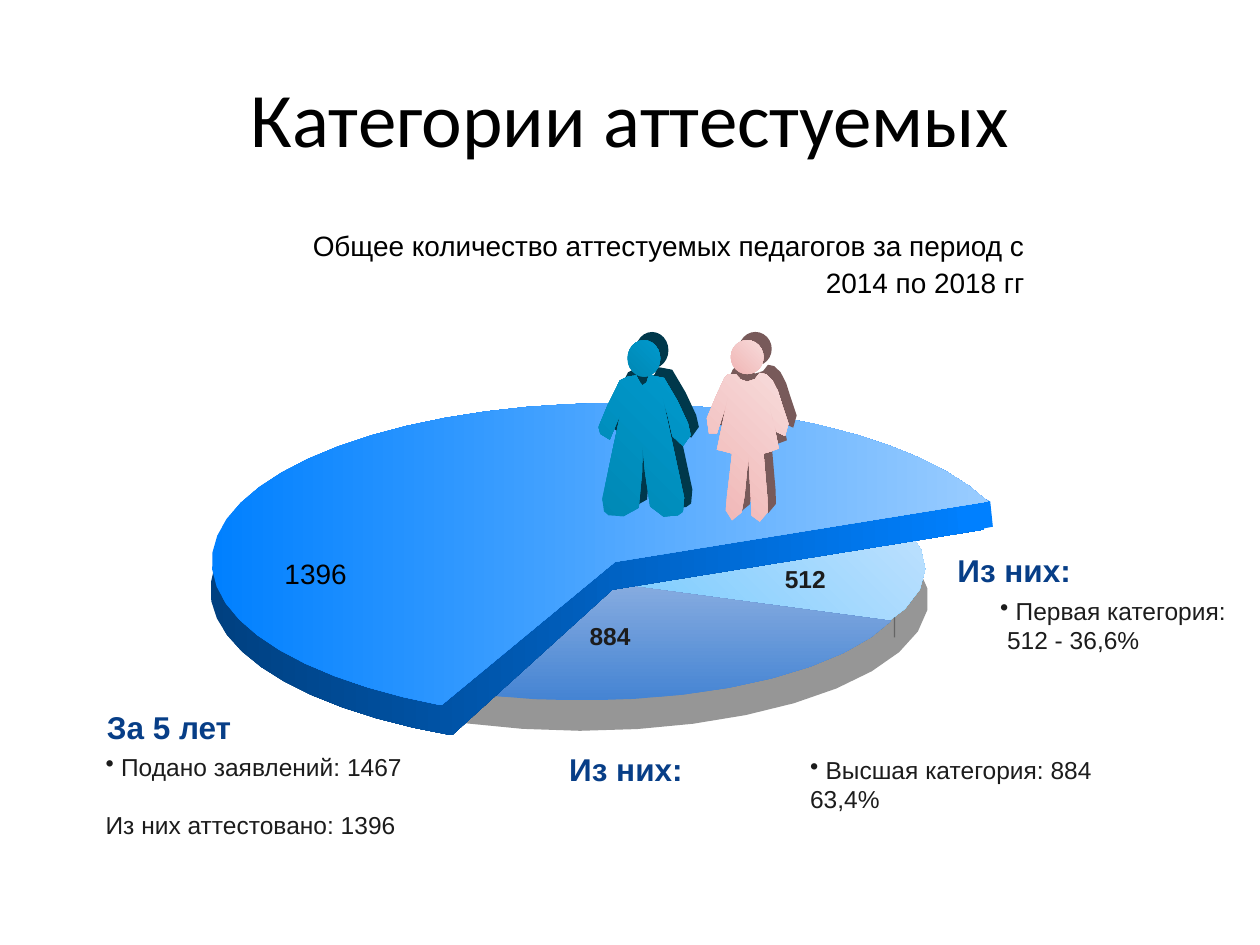
from math import cos, radians, sin

from lxml import etree
from pptx import Presentation
from pptx.dml.color import RGBColor
from pptx.enum.shapes import MSO_CONNECTOR, MSO_SHAPE
from pptx.enum.text import MSO_ANCHOR, PP_ALIGN
from pptx.oxml.ns import qn
from pptx.util import Pt

LEFT, CENTER, RIGHT = PP_ALIGN.LEFT, PP_ALIGN.CENTER, PP_ALIGN.RIGHT
TOP, MIDDLE = MSO_ANCHOR.TOP, MSO_ANCHOR.MIDDLE
OVAL, STRAIGHT = MSO_SHAPE.OVAL, MSO_CONNECTOR.STRAIGHT

BLACK = RGBColor(0x00, 0x00, 0x00)
INK = RGBColor(0x1C, 0x1C, 0x1C)
NAVY = RGBColor(0x07, 0x3E, 0x87)
GREY = RGBColor(0x96, 0x96, 0x96)
SKY = RGBColor(0x31, 0xB6, 0xFD)
SKY_PALE = RGBColor(0xCA, 0xE4, 0xFE)
STEEL = RGBColor(0x45, 0x84, 0xD3)
STEEL_PALE = RGBColor(0xCF, 0xD8, 0xEE)
BLUE = RGBColor(0x00, 0x80, 0xFF)
BLUE_DARK = RGBColor(0x00, 0x40, 0x80)
BLUE_PALE = RGBColor(0x99, 0xCC, 0xFF)
TEAL = RGBColor(0x00, 0x88, 0xB5)
TEAL_LIGHT = RGBColor(0x00, 0x99, 0xCC)
TEAL_DARK = RGBColor(0x00, 0x38, 0x4B)
PINK = RGBColor(0xF0, 0xB5, 0xB4)
PINK_LIGHT = RGBColor(0xF7, 0xDB, 0xDB)
PINK_DARK = RGBColor(0x78, 0x5A, 0x5A)

prs = Presentation()
prs.slide_width, prs.slide_height = Pt(720), Pt(540)
slide = prs.slides.add_slide(prs.slide_layouts[6])
shapes = slide.shapes


def paint(s, colours, angle=0):
    """Fill with one colour, or with a gradient of two."""
    s.shadow.inherit = False
    s.line.fill.background()
    if len(colours) == 1:
        s.fill.solid()
        s.fill.fore_color.rgb = colours[0]
    else:
        s.fill.gradient()
        s.fill.gradient_angle = angle
        for stop, colour in zip(s.fill.gradient_stops, colours):
            stop.color.rgb = colour


def outline(points):
    """Closed freeform through points given in points."""
    grid = [(x * 100, y * 100) for x, y in points]
    builder = shapes.build_freeform(*grid[0], scale=Pt(1) / 100)
    builder.add_line_segments(grid[1:], close=True)
    return builder.convert_to_shape()


# Pie sectors: centre, radii, start and end angle (clockwise), fill
SECTORS = [
    (332.2, 342.4, 198.4, 75.2, -33.3, 308.8, [GREY], 0),
    (337.9, 324.7, 190.8, 67.5, -19, 333, [SKY, SKY_PALE], 45),
    (332.6, 331.2, 187.9, 69.1, 20, 333, [STEEL, STEEL_PALE], 90),
    (349.9, 337, 229.7, 90.7, 113.5, 337.7, [BLUE_DARK, BLUE], 0),
    (351.4, 321.1, 230.4, 90.7, 115.5, 337.6, [BLUE, BLUE_PALE], 0),
]
STEPS = 36
for i, (cx, cy, rx, ry, start, end, colours, angle) in enumerate(SECTORS):
    if i == 3:
        # Boundary tick between the two lower sectors
        s = shapes.add_connector(STRAIGHT, Pt(511.2), Pt(352.8), Pt(511.2), Pt(364.3))
        s.line.width = Pt(0.75)
        s.line.color.rgb = INK
        clr = s.line._ln.find(".//" + qn("a:srgbClr"))
        etree.SubElement(clr, qn("a:alpha"), val="40000")
        etree.SubElement(s._element.spPr, qn("a:effectLst"))
    if i == 4:
        # Right edge of the raised sector
        edge = [(565.9, 286.6), (567.4, 301), (547.9, 304.6), (545, 275.8)]
        paint(outline(edge), [BLUE])
    turns = [radians(start + (end - start) * n / STEPS) for n in range(STEPS + 1)]
    arc = [(cx + rx * cos(t), cy + ry * sin(t)) for t in turns]
    paint(outline(arc + [(cx, cy)]), colours, angle)

# Bodies on a grid of 0.72 pt: start, then curves (6 numbers) or lines (2)
MAN = [
    (515, 298), (515, 302, 512, 306, 510, 306), (509, 306, 507, 302, 505, 298),
    (500, 298, 496, 299, 492, 302), (489, 306, 475, 337, 475, 339),
    (475, 341, 476, 348, 484, 349), (490, 345, 496, 312, 496, 312),
    (494, 320, 478, 396, 478, 396), (477, 406, 481, 408, 483, 409),
    (488, 410, 502, 412, 507, 403), (511, 393, 509, 353, 510, 353),
    (512, 353, 511, 393, 516, 402), (520, 412, 533, 411, 538, 409),
    (540, 408, 545, 407, 543, 395), (525, 312),
    (523, 301, 527, 323, 530, 330), (533, 337, 533, 358, 542, 354),
    (552, 350, 547, 341, 546, 336), (544, 334, 532, 302, 527, 300),
    (519, 298, 515, 298, 515, 298),
]
WOMAN = [
    (593, 303), (598, 303, 601, 300, 603, 296), (606, 296, 610, 297, 613, 302),
    (616, 306, 619, 314, 621, 322), (623, 329, 631, 345, 623, 346),
    (617, 348, 615, 340, 613, 333), (611, 323, 607, 310, 607, 310),
    (608, 314, 619, 348, 618, 356), (611, 359, 612, 358, 606, 360),
    (607, 371, 608, 385, 609, 395), (609, 401, 612, 413, 603, 414),
    (594, 414, 597, 407, 596, 397), (594, 362), (591, 393),
    (589, 403, 590, 413, 581, 413), (573, 413, 577, 398, 577, 394),
    (577, 389, 581, 366, 581, 360), (575, 358, 569, 357, 569, 357),
    (579, 310), (579, 308, 572, 341, 569, 344),
    (566, 348, 558, 344, 561, 332), (562, 328, 574, 302, 575, 300),
    (577, 298, 578, 295, 584, 297), (587, 300, 588, 303, 593, 303),
]
FIGURES = [
    (MAN, (358.6, 194.4, 18.7, 20.9), [TEAL, TEAL_LIGHT], [TEAL_DARK]),
    (WOMAN, (417.6, 194.4, 18.7, 19.4), [PINK, PINK_LIGHT], [PINK_DARK]),
]
DEPTH = 4.7
for body, (x, y, w, h), front, back in FIGURES:
    points = [body[0]]
    for seg in body[1:]:
        if len(seg) == 2:
            points.append(seg)
            continue
        # Middle and end of each curve
        x0, y0 = points[-1]
        x1, y1, x2, y2, x3, y3 = seg
        middle = ((x0 + 3 * x1 + 3 * x2 + x3) / 8, (y0 + 3 * y1 + 3 * y2 + y3) / 8)
        points += [middle, (x3, y3)]
    # Dark back layer, offset up and right, then the front
    for shift, colours in ((DEPTH, back), (0, front)):
        paint(outline([(px * 0.72 + shift, py * 0.72 - shift) for px, py in points]), colours, 45)
        s = shapes.add_shape(OVAL, Pt(x + shift), Pt(y - shift), Pt(w), Pt(h))
        paint(s, colours, 45)

# Text formats
NUMBER = dict(size=Pt(14), name="Arial", bold=True)
HEAD = dict(size=Pt(18), name="Arial", bold=True)
BODY = dict(size=Pt(14), name="Arial")
LEAD = dict(size=Pt(16), name="Arial")
TITLE = dict(size=Pt(44), name="Calibri")

# Box, lines, format, colour, alignment, anchor, wrap, gap between lines
TEXTS = [
    ((36, 21.6, 648, 90), ["Категории аттестуемых"], TITLE, BLACK, CENTER, MIDDLE, True, 0),
    ((155.5, 125.3, 437, 49.7),
     ["Общее количество аттестуемых педагогов за период с 2014 по 2018 гг"],
     LEAD, BLACK, RIGHT, TOP, True, 0),
    ((155.5, 314.6, 50.4, 26.6), ["1396"], LEAD, BLACK, LEFT, TOP, False, 0),
    ((441.4, 319, 59.8, 23.8), ["512"], NUMBER, INK, LEFT, TOP, True, 0),
    ((329.8, 351.4, 64.8, 23.8), ["884"], NUMBER, INK, LEFT, TOP, True, 0),
    ((54, 398.9, 119.5, 33.1), ["За 5 лет"], HEAD, NAVY, LEFT, MIDDLE, False, 0),
    ((318.2, 422.6, 159.8, 33.1), ["Из них:"], HEAD, NAVY, LEFT, MIDDLE, False, 0),
    ((540, 308.9, 159.8, 33.1), ["Из них:"], HEAD, NAVY, LEFT, MIDDLE, False, 0),
    ((53.3, 426.2, 185, 58.3), ["• Подано заявлений: 1467", "Из них аттестовано: 1396"],
     BODY, INK, LEFT, TOP, False, 16.5),
    ((455.8, 427.7, 176.4, 58.3), ["• Высшая категория: 884", "63,4%"],
     BODY, INK, LEFT, TOP, False, 0),
    ((564.5, 337, 144, 41), ["• Первая категория:", " 512 - 36,6%"],
     BODY, INK, LEFT, TOP, False, 0),
]
for box, lines, fmt, colour, align, anchor, wrap, gap in TEXTS:
    tf = shapes.add_textbox(*map(Pt, box)).text_frame
    tf.word_wrap = wrap
    tf.vertical_anchor = anchor
    for i, line in enumerate(lines):
        p = tf.paragraphs[0] if i == 0 else tf.add_paragraph()
        p.alignment = align
        if align == RIGHT:
            p.line_spacing = 1.1
        if i and gap:
            p.space_before = Pt(gap)
        if line.startswith("•"):
            etree.SubElement(p._p.get_or_add_pPr(), qn("a:buChar"), char="•")
            line = line[1:]
        r = p.add_run()
        r.text = line
        for key, value in fmt.items():
            setattr(r.font, key, value)
        r.font.color.rgb = colour

prs.save("out.pptx")
